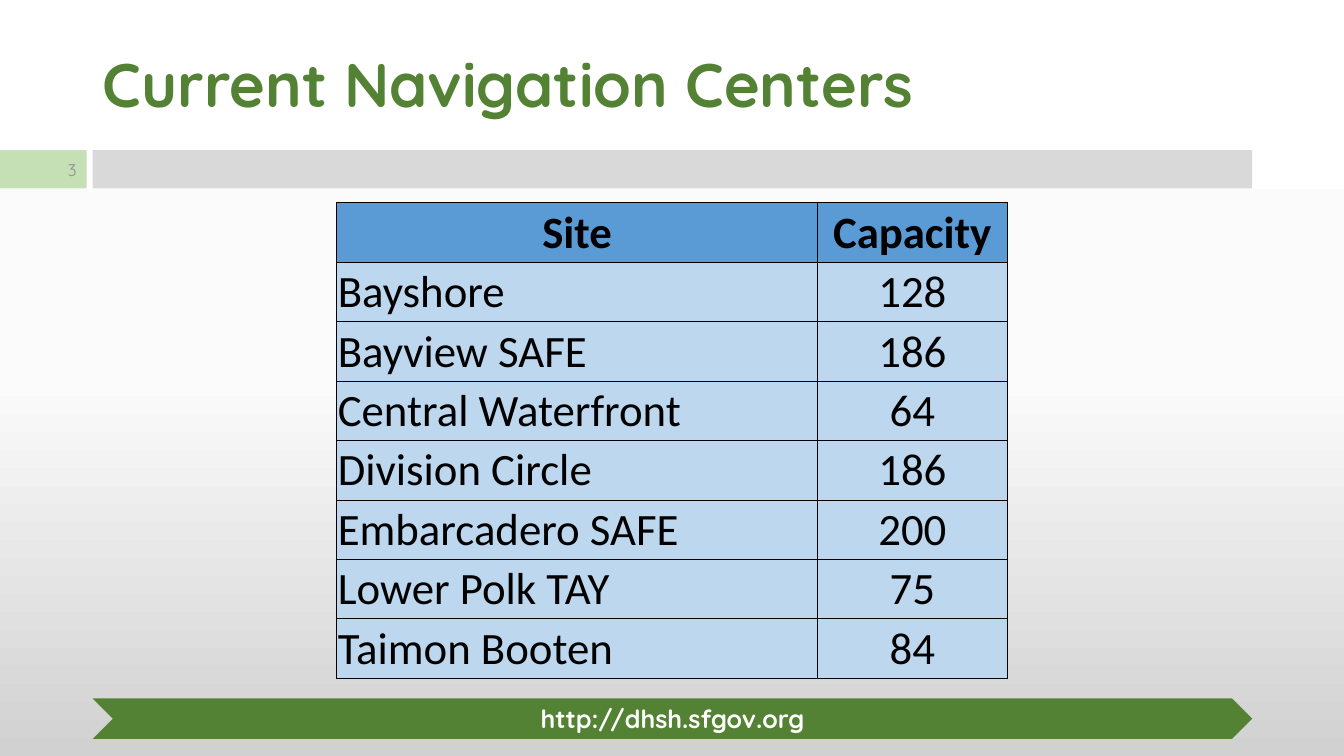
from copy import deepcopy
from typing import NamedTuple

from pptx import Presentation
from pptx.dml.color import RGBColor
from pptx.enum.shapes import MSO_SHAPE as Preset
from pptx.enum.text import MSO_ANCHOR as Anchor, MSO_AUTO_SIZE as AutoSize, PP_ALIGN as Align
from pptx.oxml.ns import qn
from pptx.oxml.xmlchemy import OxmlElement
from pptx.slide import Slide
from pptx.table import _Cell as Cell
from pptx.text.text import TextFrame
from pptx.util import Inches, Pt

WHITE = RGBColor(0xFF, 0xFF, 0xFF)
BLACK = RGBColor(0x00, 0x00, 0x00)
OFF_WHITE = RGBColor(0xFB, 0xFB, 0xFB)
SILVER = RGBColor(0xD1, 0xD1, 0xD1)
BAR_GRAY = RGBColor(0xD9, 0xD9, 0xD9)
NUMBER_GRAY = RGBColor(0x8C, 0x8C, 0x8C)
GREEN = RGBColor(0x54, 0x82, 0x35)
PALE_GREEN = RGBColor(0xC5, 0xE0, 0xB4)
BLUE = RGBColor(0x5B, 0x9B, 0xD5)
PALE_BLUE = RGBColor(0xBD, 0xD7, 0xEE)

HEADING_FONT = "Quicksand"
TABLE_FONT = "Calibri"
MARGIN, CONTENT_WIDTH = 0.92, 11.5
BAR_TOP, BAR_HEIGHT = 1.49, 0.38
TABLE_LEFT, TABLE_TOP, ROW_HEIGHT = 3.34, 2.01, 0.59
COLUMN_WIDTHS = (4.77, 1.88)
CELL_INSET = 0.01


class Band(NamedTuple):
    preset: Preset
    left: float
    top: float
    width: float
    height: float
    fill: RGBColor
    text: str = ""
    size: int = 18
    color: RGBColor = WHITE
    bold: bool = False
    align: Align = Align.CENTER


class Center(NamedTuple):
    site: str
    capacity: str


BANDS = (
    Band(Preset.RECTANGLE, 0, BAR_TOP, 0.86, BAR_HEIGHT, PALE_GREEN,
         "3", size=12, color=NUMBER_GRAY, align=Align.RIGHT),
    Band(Preset.RECTANGLE, MARGIN, BAR_TOP, CONTENT_WIDTH, BAR_HEIGHT, BAR_GRAY),
    Band(Preset.CHEVRON, MARGIN, 6.93, CONTENT_WIDTH, 0.4, GREEN,
         "http://dhsh.sfgov.org", bold=True),
)
HEADER = Center("Site", "Capacity")
CENTERS = (
    Center("Bayshore", "128"),
    Center("Bayview SAFE", "186"),
    Center("Central Waterfront", "64"),
    Center("Division Circle", "186"),
    Center("Embarcadero SAFE", "200"),
    Center("Lower Polk TAY", "75"),
    Center("Taimon Booten", "84"),
)


def write(frame: TextFrame, text: str, *, size: int, color: RGBColor,
          font: str = HEADING_FONT, bold: bool = False,
          align: Align = Align.LEFT) -> None:
    paragraph = frame.paragraphs[0]
    paragraph.alignment = align
    run = paragraph.add_run()
    run.text = text
    run.font.name = font
    run.font.size = Pt(size)
    run.font.bold = bold
    run.font.color.rgb = color


def paint_background(slide: Slide) -> None:
    fill = slide.background.fill
    fill.gradient()
    fill.gradient_angle = 270
    stops = slide.element.find(".//" + qn("a:gsLst"))
    stops.insert(1, deepcopy(stops[0]))
    colors = (WHITE, OFF_WHITE, SILVER)
    for stop, color, position in zip(fill.gradient_stops, colors, (0, 0.5, 1)):
        stop.color.rgb = color
        stop.position = position


def add_band(slide: Slide, band: Band) -> None:
    shape = slide.shapes.add_shape(
        band.preset, *map(Inches, (band.left, band.top, band.width, band.height)))
    shape.shadow.inherit = False
    shape.fill.solid()
    shape.fill.fore_color.rgb = band.fill
    shape.line.fill.background()
    if band.text:
        shape.text_frame.vertical_anchor = Anchor.MIDDLE
        write(shape.text_frame, band.text, size=band.size, color=band.color,
              bold=band.bold, align=band.align)


def add_title(slide: Slide, text: str) -> None:
    title = slide.shapes.title
    title.left, title.top = Inches(MARGIN), Inches(0.4)
    title.width, title.height = Inches(CONTENT_WIDTH), Inches(0.94)
    frame = title.text_frame
    frame.word_wrap = True
    frame.auto_size = AutoSize.NONE
    frame.vertical_anchor = Anchor.MIDDLE
    write(frame, text, size=44, color=GREEN, bold=True)
    frame.paragraphs[0].line_spacing = 0.9


def outline_cell(cell: Cell, color: RGBColor, width: float) -> None:
    """Draw all four borders; they must come before the cell's fill."""
    properties = cell._tc.get_or_add_tcPr()
    for index, side in enumerate(("a:lnL", "a:lnR", "a:lnT", "a:lnB")):
        line = OxmlElement(side)
        line.set("w", str(Pt(width)))
        solid = OxmlElement("a:solidFill")
        tint = OxmlElement("a:srgbClr")
        tint.set("val", str(color))
        solid.append(tint)
        line.append(solid)
        properties.insert(index, line)


def add_capacity_table(slide: Slide) -> None:
    rows = (HEADER, *CENTERS)
    table = slide.shapes.add_table(
        len(rows), len(COLUMN_WIDTHS), Inches(TABLE_LEFT), Inches(TABLE_TOP),
        Inches(sum(COLUMN_WIDTHS)), Inches(ROW_HEIGHT * len(rows))).table
    for column, width in zip(table.columns, COLUMN_WIDTHS):
        column.width = Inches(width)
    for row_index, center in enumerate(rows):
        table.rows[row_index].height = Inches(ROW_HEIGHT)
        is_header = center is HEADER
        for column_index, text in enumerate(center):
            cell = table.cell(row_index, column_index)
            cell.fill.solid()
            cell.fill.fore_color.rgb = BLUE if is_header else PALE_BLUE
            cell.margin_left = cell.margin_right = cell.margin_top = Inches(CELL_INSET)
            cell.margin_bottom = 0
            cell.vertical_anchor = Anchor.MIDDLE
            outline_cell(cell, BLACK, 0.5)
            centered = is_header or column_index > 0
            write(cell.text_frame, text, size=32, color=BLACK, font=TABLE_FONT,
                  bold=is_header, align=Align.CENTER if centered else Align.LEFT)


def main() -> None:
    deck = Presentation()
    deck.slide_width, deck.slide_height = Inches(13.33), Inches(7.5)
    slide = deck.slides.add_slide(deck.slide_layouts.get_by_name("Title Only"))
    paint_background(slide)
    for band in BANDS:
        add_band(slide, band)
    add_title(slide, "Current Navigation Centers")
    add_capacity_table(slide)
    deck.save("out.pptx")


if __name__ == "__main__":
    main()
